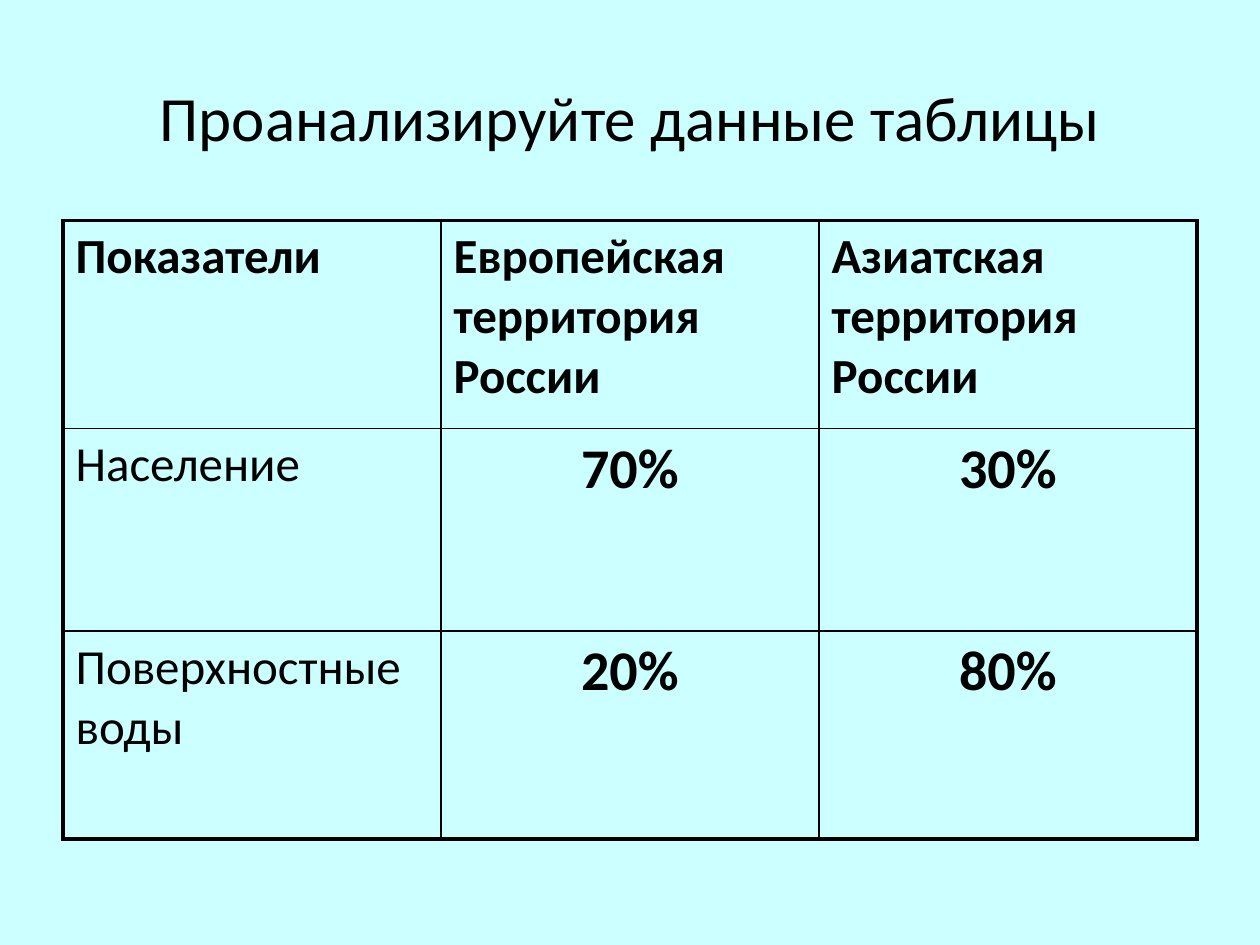
from lxml import etree
from pptx import Presentation
from pptx.dml.color import RGBColor
from pptx.enum import text
from pptx.oxml.ns import qn
from pptx.util import Inches, Pt

BACKGROUND = RGBColor(0xCC, 0xFF, 0xFF)
INK = RGBColor(0, 0, 0)
FONT = "Calibri"
OUTER, INNER = Pt(2.25), Pt(1)

ROWS = [
    ("Показатели", "Европейская территория России", "Азиатская территория России"),
    ("Население", "70%", "30%"),
    ("Поверхностные воды", "20%", "80%"),
]
ROW_HEIGHTS = (1.65, 1.61, 1.65)


def format_text(frame, size, bold, align):
    paragraph = frame.paragraphs[0]
    paragraph.alignment = align
    font = paragraph.runs[0].font
    font.name, font.size, font.bold = FONT, Pt(size), bold
    font.color.rgb = INK


def add_border(cell, side, width):
    line = etree.SubElement(cell._tc.get_or_add_tcPr(), qn(f"a:ln{side}"), w=str(width))
    fill = etree.SubElement(line, qn("a:solidFill"))
    etree.SubElement(fill, qn("a:srgbClr"), val=str(INK))


def add_title(slide, wording):
    title = slide.shapes.title
    title.left, title.top = Inches(0.5), Inches(0.3)
    title.width, title.height = Inches(9), Inches(1.25)
    title.text_frame.text = wording
    title.text_frame.vertical_anchor = text.MSO_ANCHOR.MIDDLE
    format_text(title.text_frame, 36, False, text.PP_ALIGN.CENTER)


def fill_cell(cell, wording, row, column):
    cell.text = wording
    is_value = row > 0 and column > 0
    format_text(
        cell.text_frame,
        size=32 if is_value else 28,
        bold=row == 0 or is_value,
        align=text.PP_ALIGN.CENTER if is_value else text.PP_ALIGN.LEFT,
    )
    # Thick lines around the table, thin lines inside it
    on_edge = {
        "L": column == 0,
        "R": column == len(ROWS[0]) - 1,
        "T": row == 0,
        "B": row == len(ROWS) - 1,
    }
    for side, is_outer in on_edge.items():
        add_border(cell, side, OUTER if is_outer else INNER)
    cell.fill.background()


def add_indicators(slide):
    indicators = slide.shapes.add_table(
        len(ROWS), len(ROWS[0]),
        Inches(0.5), Inches(1.75), Inches(9), Inches(sum(ROW_HEIGHTS)),
    ).table
    indicators.first_row = indicators.horz_banding = False
    for row, (wordings, height) in enumerate(zip(ROWS, ROW_HEIGHTS)):
        indicators.rows[row].height = Inches(height)
        for column, wording in enumerate(wordings):
            fill_cell(indicators.cell(row, column), wording, row, column)


def main():
    deck = Presentation()
    deck.slide_width, deck.slide_height = Inches(10), Inches(7.5)
    slide = deck.slides.add_slide(deck.slide_layouts[5])
    slide.background.fill.solid()
    slide.background.fill.fore_color.rgb = BACKGROUND

    add_title(slide, "Проанализируйте данные таблицы")
    add_indicators(slide)
    deck.save("out.pptx")


if __name__ == "__main__":
    main()
